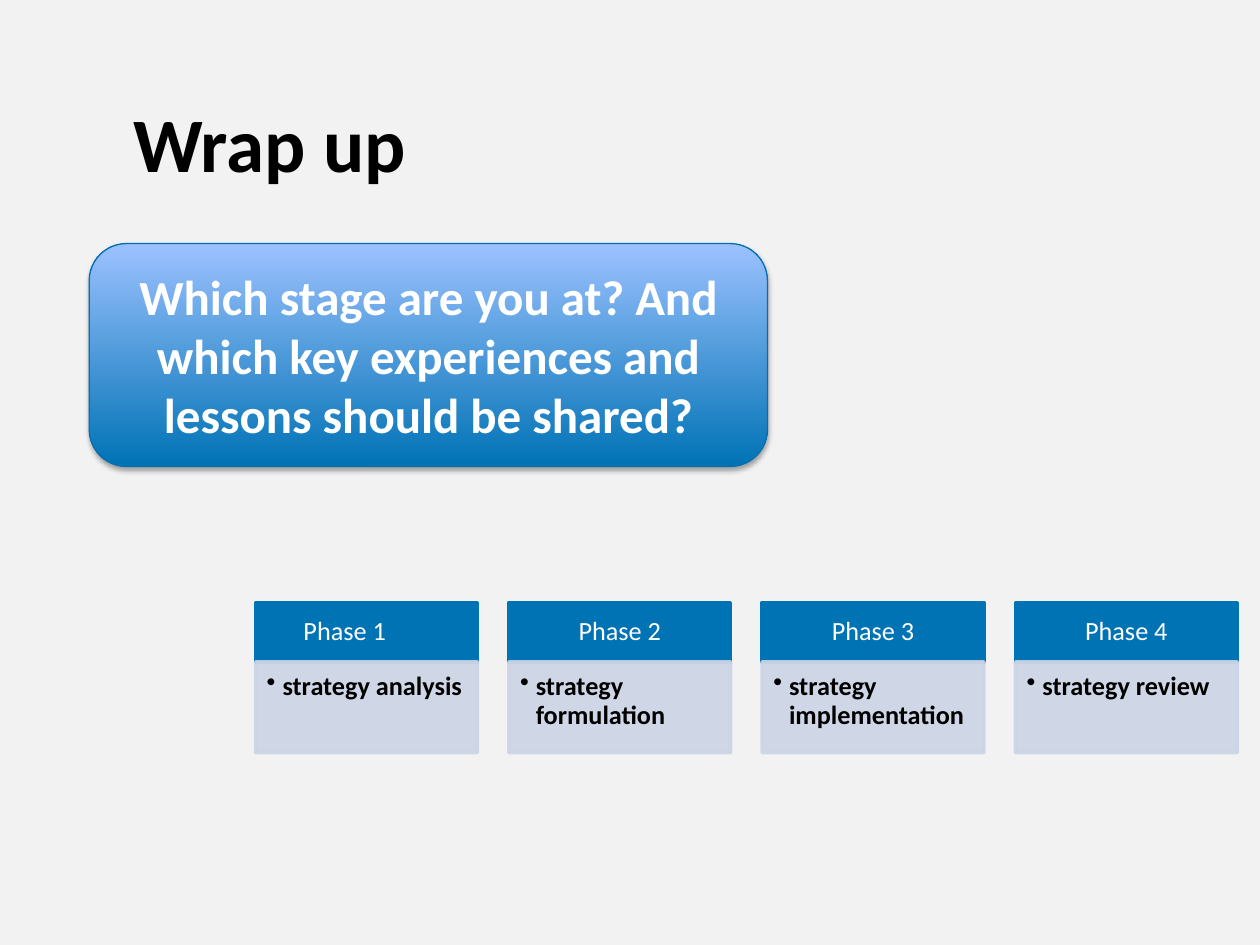
from dataclasses import dataclass

from lxml.etree import SubElement
from pptx import Presentation
from pptx.dml.color import RGBColor
from pptx.enum.shapes import MSO_SHAPE
from pptx.enum.text import MSO_ANCHOR, MSO_AUTO_SIZE, PP_ALIGN
from pptx.oxml.ns import qn
from pptx.util import Pt


@dataclass(frozen=True)
class Theme:
    """Colours, font and type sizes of the slide."""
    face: str = "Calibri"
    back: str = "F2F2F2"
    ink: str = "000000"
    white: str = "FFFFFF"
    blue: str = "0073B5"
    sky: str = "9CC1FF"
    edge: str = "0070B1"
    pale: str = "CCD5E5"
    title: int = 44
    ask: int = 28
    small: int = 15


THEME = Theme()
PHASES = ["strategy analysis", "strategy formulation",
          "strategy implementation", "strategy review"]


def rgb(code):
    """Turn a hex code into a colour."""
    return RGBColor.from_string(code)


def apply(thing, form):
    """Set each attribute named in a dict."""
    for name, value in form.items():
        setattr(thing, name, value)


def write(shape, text, size, color, bold=True, frame=None, para=None):
    """Put one styled paragraph into a shape and return it."""
    apply(shape.text_frame, frame or {})
    line = shape.text_frame.paragraphs[0]
    apply(line, para or {})
    run = line.add_run()
    run.text = text
    apply(run.font, {"name": THEME.face, "size": Pt(size), "bold": bold})
    run.font.color.rgb = rgb(color)
    return line


def block(slide, kind, area, edge, width):
    """Add a flat shape with a coloured outline."""
    shape = slide.shapes.add_shape(kind, *map(Pt, area))
    shape.line.color.rgb = rgb(edge)
    shape.line.width = Pt(width)
    shape.shadow.inherit = False
    return shape


def panel(slide, area, color, clear=None):
    """Add a plain filled box, see-through if asked."""
    shape = block(slide, MSO_SHAPE.RECTANGLE, area, color, 2)
    shape.fill.solid()
    shape.fill.fore_color.rgb = rgb(color)
    if clear:
        for tint in list(shape.element.spPr.iter(qn("a:srgbClr"))):
            SubElement(tint, qn("a:alpha"), val=str(clear * 1000))
    return shape


def inset(left, top, right, foot):
    """Give the text margins as a dict."""
    return {"margin_left": Pt(left), "margin_top": Pt(top),
            "margin_right": Pt(right), "margin_bottom": Pt(foot),
            "word_wrap": True}


def bullet(line, indent):
    """Give a paragraph a hanging dot."""
    props = line._p.get_or_add_pPr()
    props.set("marL", str(Pt(indent)))
    props.set("indent", str(-Pt(indent)))
    SubElement(props, qn("a:buChar"), char="•")


def phase(slide, left, head, text):
    """Add a phase header with its note below."""
    top, wide, high = 344.3, 126.8, 33.9
    cap = panel(slide, (left, top, wide, high), THEME.blue)
    write(cap, head, THEME.small, THEME.white, False,
          {**inset(8.5, 5, 8.5, 5), "vertical_anchor": MSO_ANCHOR.MIDDLE},
          {"alignment": PP_ALIGN.CENTER, "line_spacing": 0.9})
    note = panel(slide, (left, top + high, wide, 51.9), THEME.pale, 90)
    line = write(note, text, THEME.small, THEME.ink, True,
                 {**inset(6.4, 6.4, 8.5, 9.6),
                  "vertical_anchor": MSO_ANCHOR.TOP},
                 {"alignment": PP_ALIGN.LEFT, "line_spacing": 0.9, "level": 1})
    bullet(line, 9)


def ask(slide, area, text):
    """Add the shaded question box."""
    shape = block(slide, MSO_SHAPE.ROUNDED_RECTANGLE, area, THEME.edge, 0.75)
    shape.fill.gradient()
    shape.fill.gradient_angle = 90
    stops = zip(shape.fill.gradient_stops, (THEME.blue, THEME.sky), (0, 1))
    for stop, color, place in stops:
        stop.color.rgb = rgb(color)
        stop.position = place
    glow = SubElement(shape.element.spPr.find(qn("a:effectLst")),
                      qn("a:outerShdw"), blurRad=str(Pt(3.1)),
                      dist=str(Pt(1.8)), dir="5400000", rotWithShape="0")
    tint = SubElement(glow, qn("a:srgbClr"), val=THEME.ink)
    SubElement(tint, qn("a:alpha"), val="35000")
    write(shape, text, THEME.ask, THEME.white, True,
          {"word_wrap": True, "vertical_anchor": MSO_ANCHOR.MIDDLE},
          {"alignment": PP_ALIGN.CENTER})


def title(slide, area, text):
    """Add the slide title."""
    box = slide.shapes.add_textbox(*map(Pt, area))
    write(box, text, THEME.title, THEME.ink, True,
          {"word_wrap": False, "auto_size": MSO_AUTO_SIZE.SHAPE_TO_FIT_TEXT})


def main():
    """Build and save the slide."""
    deck = Presentation()
    apply(deck, {"slide_width": Pt(720), "slide_height": Pt(540)})
    slide = deck.slides.add_slide(deck.slide_layouts[6])
    slide.background.fill.solid()
    slide.background.fill.fore_color.rgb = rgb(THEME.back)
    for index, text in enumerate(PHASES):
        tail = "" if index else "\t"
        phase(slide, 146 + 144.75 * index, f"Phase {index + 1}{tail}", text)
    ask(slide, (51, 139.2, 387.6, 127.4),
        "Which stage are you at? And which key experiences and "
        "lessons should be shared?")
    title(slide, (69, 51, 172, 60.5), "Wrap up")
    deck.save("out.pptx")


if __name__ == "__main__":
    main()
